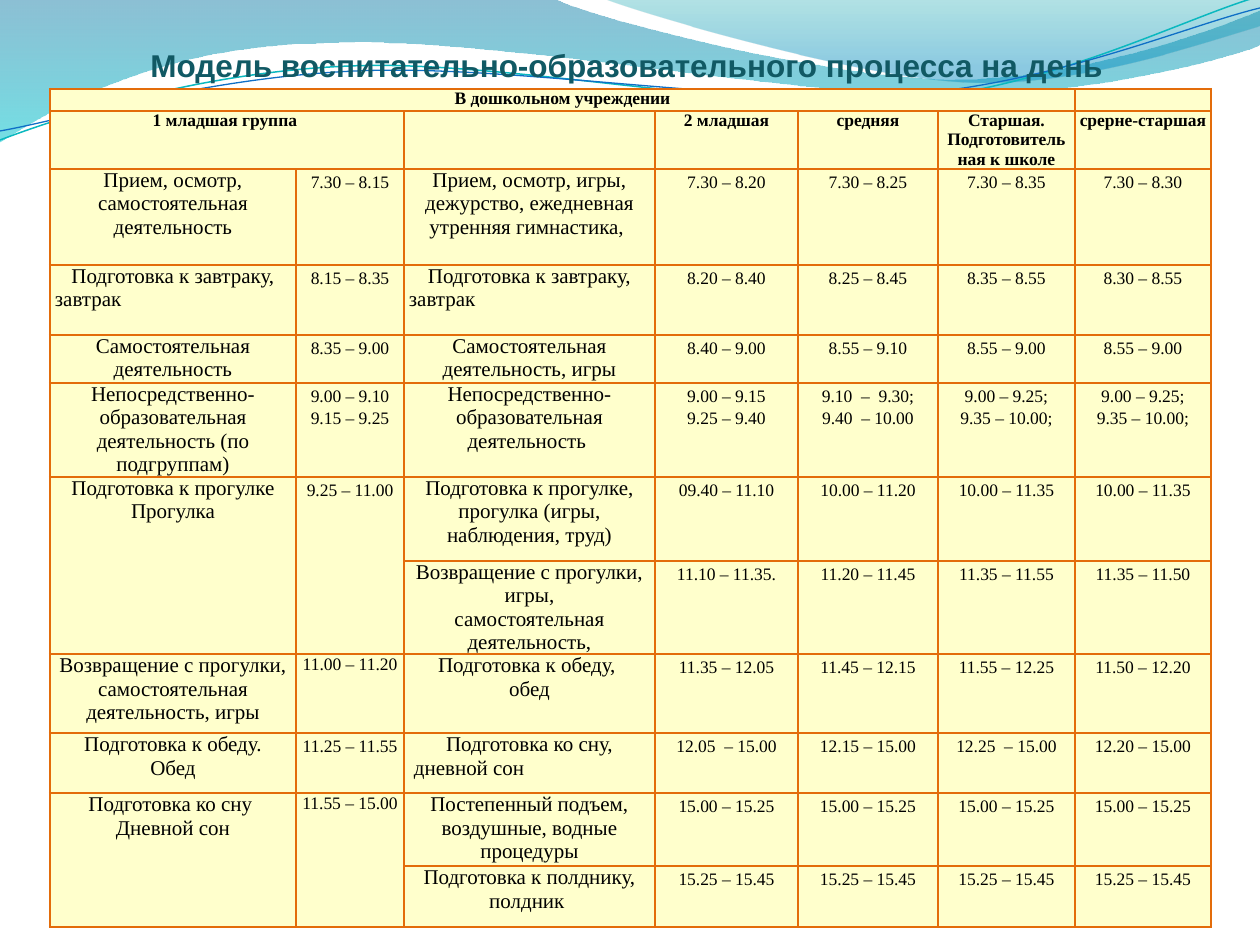
from lxml.etree import SubElement
from pptx import Presentation
from pptx.dml.color import RGBColor
from pptx.enum.text import MSO_ANCHOR as Anchor, PP_ALIGN as Align
from pptx.oxml import parse_xml
from pptx.oxml.ns import nsdecls, qn
from pptx.util import Pt

PX = 7257.14  # EMU in one px (126 px to the inch)
COLORS = {
    "title": "115964", "text": "000000", "cell": "FFFFCC", "border": "E36C0A",
    "deep": "0074A1", "cyan": "00C6CF", "teal": "00A1A9", "blue": "008BBF",
    "thread_teal": "0AB8BF", "thread_blue": "0F6FC6",
}

# Outlines: a pair is a straight step, six numbers are a Bezier curve
BIG_WAVE = [
    (0, 0), (554, -1), (600, 21, 837, 79, 955, 79), (1075, 79, 1207, 33, 1260, 11),
    (1261, 45), (1239, 55, 1096, 96, 940, 95), (784, 95, 481, 35, 324, 43),
    (163, 45, 58, 105, -1, 142), (0, 0),
]
RIGHT_WAVE = [
    (604, -1), (641, 14, 859, 78, 969, 82), (1079, 87, 1211, 40, 1260, 26), (1260, 0),
    (604, -1),
]
TEAL_THREAD = [
    (0, 140), (60, 117, 199, 72, 349, 66), (498, 59, 747, 112, 898, 101),
    (1050, 89, 1182, 19, 1257, -3),
]
BLUE_THREAD = [
    (0, 131), (59, 121, 207, 77, 357, 71), (508, 64, 752, 106, 903, 95),
    (1053, 84, 1186, 26, 1260, 8),
]

COLUMN_WIDTHS = [246, 108, 251, 143, 140, 137, 136]
ROW_HEIGHTS = [22, 58, 96, 70, 48, 94, 84, 93, 79, 60, 73, 61]
HEADER_ROWS = 2
ACTIVITY_COLUMNS = (0, 2)
LEFT_INDENTS = {"завтрак": 0, "дневной сон": 5}
TIGHT_TIMES = {"11.00 – 11.20", "11.55 – 15.00"}
MERGES = [((0, 0), (0, 5)), ((1, 0), (1, 1)), ((6, 0), (7, 0)), ((6, 1), (7, 1)),
          ((10, 0), (11, 0)), ((10, 1), (11, 1))]
SCHEDULE = [
    ["В дошкольном учреждении", "", "", "", "", "", ""],
    ["1 младшая группа ", "", "", "2 младшая", "средняя",
     "Старшая.\nПодготовительная к школе", "срерне-старшая"],
    ["Прием, осмотр, самостоятельная деятельность", "7.30 – 8.15",
     "Прием, осмотр, игры, дежурство, ежедневная утренняя гимнастика, ",
     "7.30 – 8.20", "7.30 – 8.25", "7.30 – 8.35", "7.30 – 8.30"],
    ["Подготовка к завтраку,\nзавтрак", "8.15 – 8.35", "Подготовка к завтраку,\nзавтрак",
     "8.20 – 8.40", "8.25 – 8.45", "8.35 – 8.55", "8.30 – 8.55"],
    ["Самостоятельная деятельность", "8.35 – 9.00", "Самостоятельная деятельность, игры",
     "8.40 – 9.00", "8.55 – 9.10", "8.55 – 9.00", "8.55 – 9.00"],
    ["Непосредственно- образовательная деятельность (по подгруппам)",
     "9.00 – 9.10\n9.15 – 9.25", "Непосредственно- образовательная деятельность ",
     "9.00 – 9.15\n9.25 – 9.40", "9.10  –  9.30;\n9.40  – 10.00",
     "9.00 – 9.25;\n9.35 – 10.00;", "9.00 – 9.25;\n9.35 – 10.00;"],
    ["Подготовка к прогулке\nПрогулка", "9.25 – 11.00",
     "Подготовка к прогулке, прогулка (игры, наблюдения, труд)",
     "09.40 – 11.10", "10.00 – 11.20", "10.00 – 11.35", "10.00 – 11.35"],
    ["", "", "Возвращение с прогулки, игры,\nсамостоятельная деятельность,",
     "11.10 – 11.35.", "11.20 – 11.45", "11.35 – 11.55", "11.35 – 11.50"],
    ["Возвращение с прогулки, самостоятельная деятельность, игры", "11.00 – 11.20",
     "Подготовка к обеду, \nобед",
     "11.35 – 12.05", "11.45 – 12.15", "11.55 – 12.25", "11.50 – 12.20"],
    ["Подготовка к обеду.\nОбед", "11.25 – 11.55", "Подготовка ко сну,\nдневной сон",
     "12.05  – 15.00", "12.15 – 15.00", "12.25  – 15.00", "12.20 – 15.00"],
    ["Подготовка ко сну \nДневной сон", "11.55 – 15.00",
     "Постепенный подъем, воздушные, водные процедуры"] + ["15.00 – 15.25"] * 4,
    ["", "", "Подготовка к полднику, полдник "] + ["15.25 – 15.45"] * 4,
]


def px(length):
    return round(length * PX)


def rgb(name):
    return RGBColor.from_string(COLORS[name])


def add_outline(page, outline, close):
    """Build a freeform through the end points, then bend its curved steps."""
    first, *rest = [(px(step[-2]), px(step[-1])) for step in outline]
    builder = page.shapes.build_freeform(*first, scale=1.0)
    builder.add_line_segments(rest, close=close)
    shape = builder.convert_to_shape()
    shape.shadow.inherit = False
    lines = list(shape._element.iter(qn("a:lnTo")))
    for line, step in zip(lines, outline[1:]):
        if len(step) == 6:
            curve = SubElement(line.getparent(), qn("a:cubicBezTo"))
            for x, y in zip(step[::2], step[1::2]):
                SubElement(curve, qn("a:pt"), x=str(px(x) - shape.left),
                           y=str(px(y) - shape.top))
            line.getparent().replace(line, curve)
    return shape


def add_wave(page, outline, stops):
    """Add a filled wave; stops are (position, colour, opacity percent)."""
    wave = add_outline(page, outline, close=True)
    wave.line.fill.background()
    wave.fill.gradient()
    wave.fill.gradient_angle = 270
    for stop, (position, color, _) in zip(wave.fill.gradient_stops, stops):
        stop.position = position
        stop.color.rgb = rgb(color)
    tints = wave._element.spPr.find(qn("a:gradFill")).iter(qn("a:srgbClr"))
    for tint, (_, _, opacity) in zip(tints, stops):
        SubElement(tint, qn("a:alpha"), val=str(opacity * 1000))


def add_thread(page, outline, color, width):
    thread = add_outline(page, outline, close=False)
    thread.fill.background()
    thread.line.color.rgb = rgb(color)
    thread.line.width = Pt(width)


def set_borders(cell, widths):
    """Draw the left, right, top and bottom borders, widths in points."""
    properties = cell._tc.get_or_add_tcPr()
    for index, (side, width) in enumerate(zip("LRTB", widths)):
        properties.insert(index, parse_xml(
            f'<a:ln{side} {nsdecls("a")} w="{Pt(width)}"><a:solidFill>'
            f'<a:srgbClr val="{COLORS["border"]}"/></a:solidFill></a:ln{side}>'))


def fill_cell(cell, text, header, activity, inset):
    is_time = not header and not activity
    size = 12 if activity and not header else 10
    cell.fill.solid()
    cell.fill.fore_color.rgb = rgb("cell")
    cell.margin_left = cell.margin_right = px(inset)
    cell.margin_top = px(1 if is_time else 0)
    cell.margin_bottom = 0
    cell.text = text
    for para in cell.text_frame.paragraphs:
        para.alignment = Align.CENTER
        if para.text in LEFT_INDENTS:
            para.alignment = Align.LEFT
            para._p.get_or_add_pPr().set("marL", str(px(LEFT_INDENTS[para.text])))
        if is_time and text not in TIGHT_TIMES:
            para.line_spacing = 1.15
        para.font.name = "Times New Roman"
        para.font.size = Pt(size)
        para.font.bold = header
        para.font.color.rgb = rgb("text")
        if not text:
            SubElement(para._p, qn("a:endParaRPr"), sz=str(size * 100))


def add_schedule(page):
    rows, columns = len(ROW_HEIGHTS), len(COLUMN_WIDTHS)
    table = page.shapes.add_table(rows, columns, px(50), px(89), px(sum(COLUMN_WIDTHS)),
                                  px(sum(ROW_HEIGHTS))).table
    table.first_row = table.horz_banding = False
    for column, width in zip(table.columns, COLUMN_WIDTHS):
        column.width = px(width)
    for row, height in zip(table.rows, ROW_HEIGHTS):
        row.height = px(height)
    for r, texts in enumerate(SCHEDULE):
        for c, text in enumerate(texts):
            cell = table.cell(r, c)
            is_last = c == columns - 1
            fill_cell(cell, text, r < HEADER_ROWS, c in ACTIVITY_COLUMNS, 4 if is_last else 5)
            outer = (c == 0, is_last, r == 0, r == rows - 1)
            set_borders(cell, [1.5 if edge else 1 for edge in outer])
    for first, last in MERGES:
        table.cell(*first).merge(table.cell(*last))


def add_title(page, text):
    box = page.shapes.add_textbox(px(138), px(40), px(994), px(50))
    box.text_frame.word_wrap = True
    box.text_frame.vertical_anchor = Anchor.MIDDLE
    para = box.text_frame.paragraphs[0]
    para.text = text
    para.font.name = "Arial"
    para.font.size = Pt(18)
    para.font.bold = True
    para.font.color.rgb = rgb("title")


def main():
    deck = Presentation()
    deck.slide_width, deck.slide_height = px(1260), px(945)
    page = deck.slides.add_slide(deck.slide_layouts[6])
    # Waves and threads along the top
    add_wave(page, BIG_WAVE, [(0, "deep", 45), (1, "cyan", 55)])
    add_wave(page, RIGHT_WAVE, [(0, "teal", 30), (0.8, "blue", 45)])
    add_thread(page, TEAL_THREAD, "thread_teal", 0.85)
    add_thread(page, BLUE_THREAD, "thread_blue", 0.75)
    # Day schedule and its title
    add_schedule(page)
    add_title(page, "Модель воспитательно-образовательного процесса на день")
    deck.save("out.pptx")


if __name__ == "__main__":
    main()
